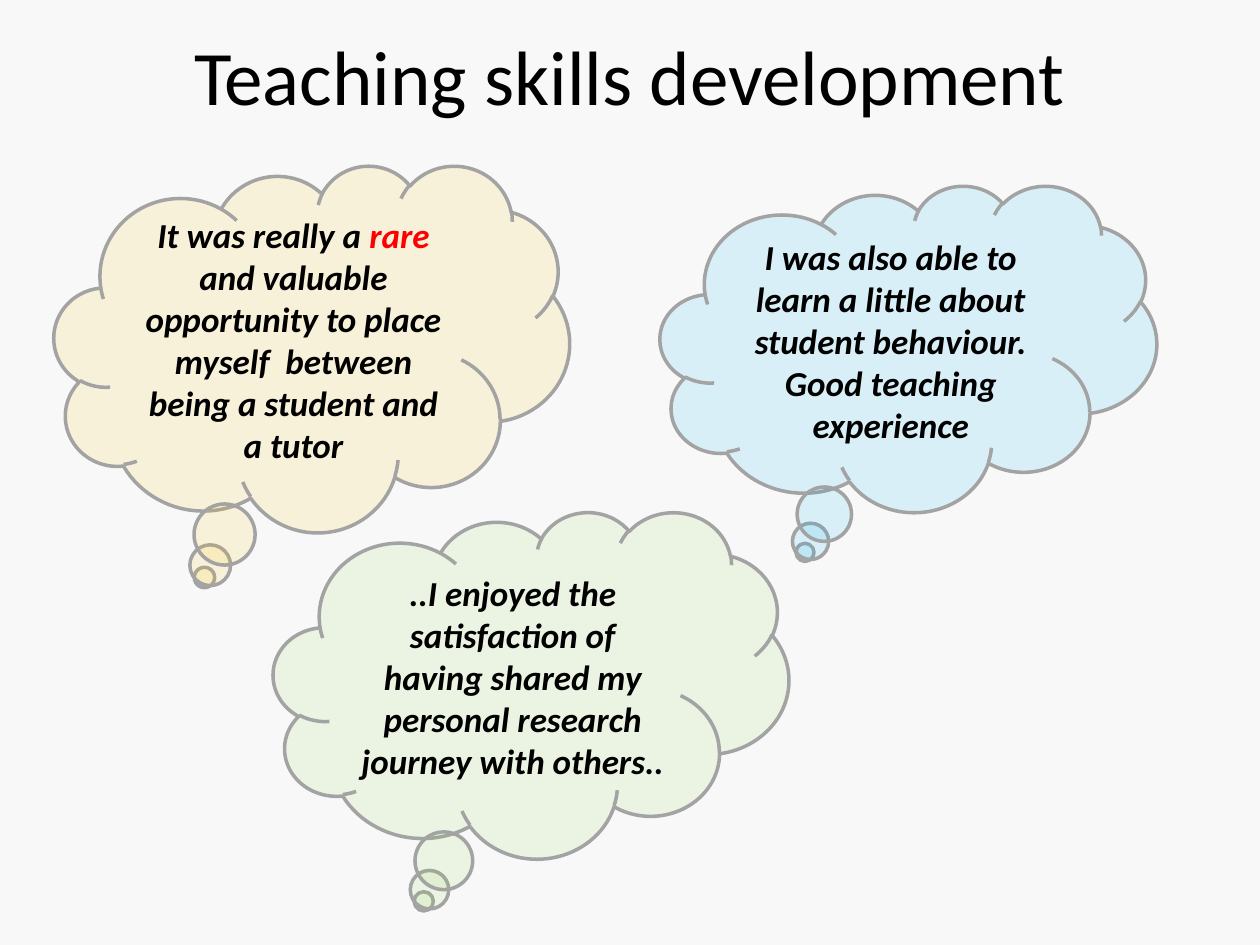
from lxml import etree
from pptx import Presentation
from pptx import util as u
from pptx.dml import color
from pptx.enum import shapes, text
from pptx.oxml import ns

HUES = {
    "back": "F8F8F8",
    "ink": "000000",
    "mark": "FF0000",
    "edge": "A3A3A3",
    "gold": "FFC000",
    "blue": "00B0F0",
    "green": "92D050",
}
CLOUDS = [
    ((0.43, 1.31, 4.09, 2.91), "gold", [
        ("It was really a ", "ink"),
        ("rare ", "mark"),
        ("and valuable opportunity to place myself  between "
         "being a student and a tutor", "ink")]),
    ((5.24, 1.47, 3.94, 2.59), "blue", [
        ("I was also able to learn a little about student behaviour. "
         "Good teaching experience", "ink")]),
    ((2.17, 4.06, 4.09, 2.75), "green", [
        ("..I enjoyed the satisfaction of having shared my personal "
         "research journey with others..", "ink")]),
]


def hue(name):
    return color.RGBColor.from_string(HUES[name])


def write(frame, parts, size, strong=False):
    frame.word_wrap = True
    frame.vertical_anchor = text.MSO_ANCHOR.MIDDLE
    para = frame.paragraphs[0]
    para.alignment = text.PP_ALIGN.CENTER
    for words, tint in parts:
        run = para.add_run()
        run.text = words
        font = run.font
        font.name = "Calibri"
        font.size = u.Pt(size)
        font.bold = font.italic = strong
        font.color.rgb = hue(tint)


def add_title(slide, box, words):
    shape = slide.shapes.add_textbox(*map(u.Inches, box))
    write(shape.text_frame, [(words, "ink")], 44)


def add_cloud(slide, box, tint, parts):
    shape = slide.shapes.add_shape(
        shapes.MSO_SHAPE.CLOUD_CALLOUT, *map(u.Inches, box))
    shape.shadow.inherit = False
    shape.fill.solid()
    shape.fill.fore_color.rgb = hue(tint)
    fill = shape.element.spPr.find(ns.qn("a:solidFill"))
    etree.SubElement(fill[0], ns.qn("a:alpha"), val="12000")
    shape.line.color.rgb = hue("edge")
    shape.line.width = u.Pt(2)
    write(shape.text_frame, parts, 20, True)


def main():
    deck = Presentation()
    deck.slide_width = u.Inches(10)
    deck.slide_height = u.Inches(7.5)
    slide = deck.slides.add_slide(deck.slide_layouts[6])
    slide.background.fill.solid()
    slide.background.fill.fore_color.rgb = hue("back")
    add_title(slide, (0.5, -0.03, 9, 1.25), "Teaching skills development")
    for box, tint, parts in CLOUDS:
        add_cloud(slide, box, tint, parts)
    deck.save("out.pptx")


if __name__ == "__main__":
    main()
